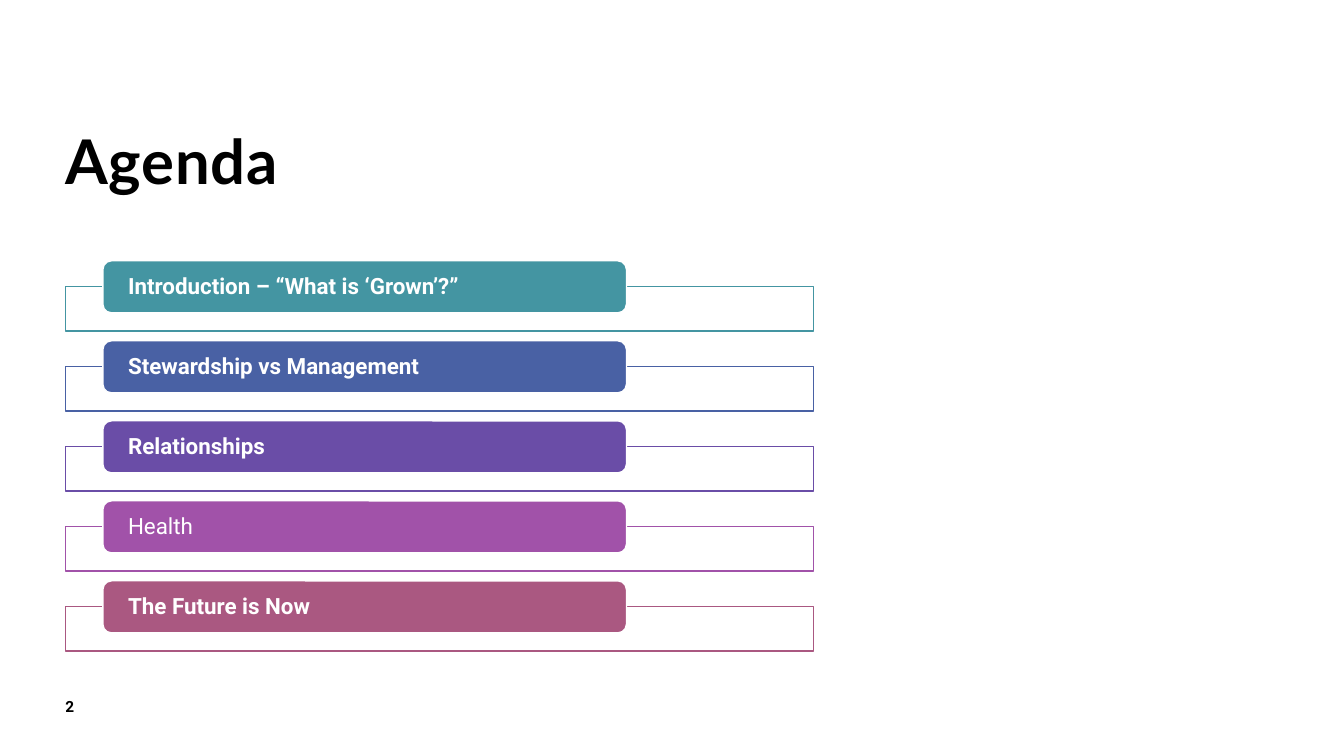
from pptx import Presentation
from pptx.dml.color import RGBColor
from pptx.enum.shapes import MSO_SHAPE as SHAPE
from pptx.enum.text import MSO_ANCHOR as ANCHOR, PP_ALIGN as ALIGN
from pptx.util import Pt

LEFT, WIDTH = 46.8, 534.2
FRAME_TOP, FRAME_HEIGHT = 204.7, 31.7
PILL_LEFT, PILL_TOP, PILL_WIDTH, PILL_HEIGHT = 73.5, 186.3, 374, 37.2
PITCH = 57.15

AGENDA = [
    ("Introduction – “What is ‘Grown’?”", "4495A2", True),
    ("Stewardship vs Management", "4961A4", True),
    ("Relationships", "6A4DA7", True),
    ("Health", "A152A9", False),
    ("The Future is Now", "AA5881", True),
]


def add_box(shape, left, top, width, height, fill, line):
    sp = s.shapes.add_shape(shape, Pt(left), Pt(top), Pt(width), Pt(height))
    sp.shadow.inherit = False
    sp.fill.solid()
    sp.fill.fore_color.rgb = RGBColor.from_string(fill)
    sp.line.color.rgb = RGBColor.from_string(line)
    sp.line.width = Pt(1)
    return sp


def set_text(sp, text, font, size, color, bold, anchor, inset=0):
    """Write one left-aligned line and return its paragraph."""
    tf = sp.text_frame
    tf.word_wrap = True
    tf.vertical_anchor = anchor
    tf.margin_left = tf.margin_right = Pt(inset)
    tf.margin_top = tf.margin_bottom = 0
    p = tf.paragraphs[0]
    p.text = text
    p.alignment = ALIGN.LEFT
    f = p.runs[0].font
    f.name, f.size, f.bold = font, Pt(size), bold
    f.color.rgb = RGBColor.from_string(color)
    return p


prs = Presentation()
prs.slide_width, prs.slide_height = Pt(960), Pt(540)
s = prs.slides.add_slide(prs.slide_layouts[6])

title = s.shapes.add_textbox(Pt(LEFT), Pt(15.1), Pt(WIDTH), Pt(125.3))
p = set_text(title, "Agenda", "Lato", 44, "000000", True, ANCHOR.BOTTOM)
p.line_spacing = 0.8
p.runs[0].font._element.set("spc", "50")

for i, (topic, color, bold) in enumerate(AGENDA):
    offset = i * PITCH
    add_box(SHAPE.RECTANGLE, LEFT, FRAME_TOP + offset, WIDTH, FRAME_HEIGHT, "FFFFFF", color)
    pill = add_box(SHAPE.ROUNDED_RECTANGLE, PILL_LEFT, PILL_TOP + offset,
                   PILL_WIDTH, PILL_HEIGHT, color, "FFFFFF")
    p = set_text(pill, topic, "Roboto", 16, "FFFFFF", bold, ANCHOR.MIDDLE, 16.2)
    p.line_spacing = 0.9

number = s.shapes.add_textbox(Pt(LEFT), Pt(498.2), Pt(41), Pt(19.4))
p = set_text(number, "2", "Roboto", 11, "000000", True, ANCHOR.TOP)
p.space_after = Pt(6)

prs.save("out.pptx")
